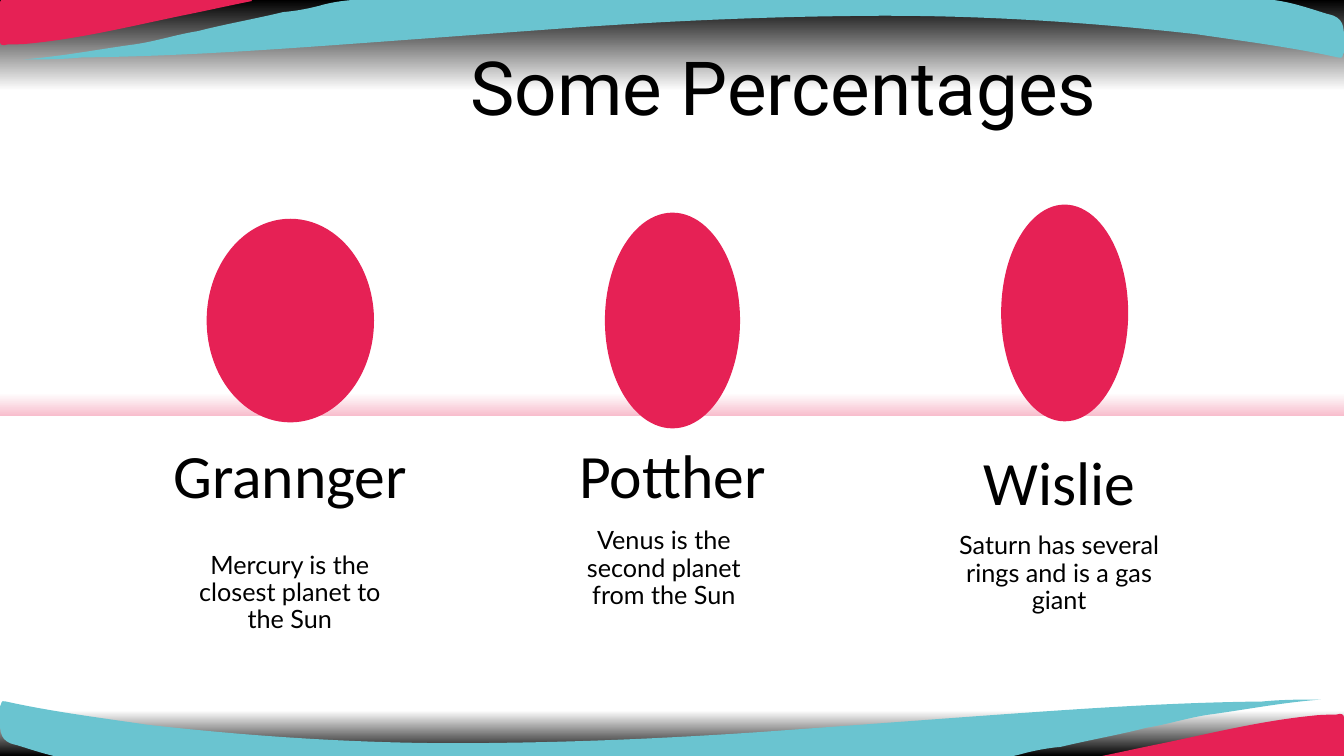
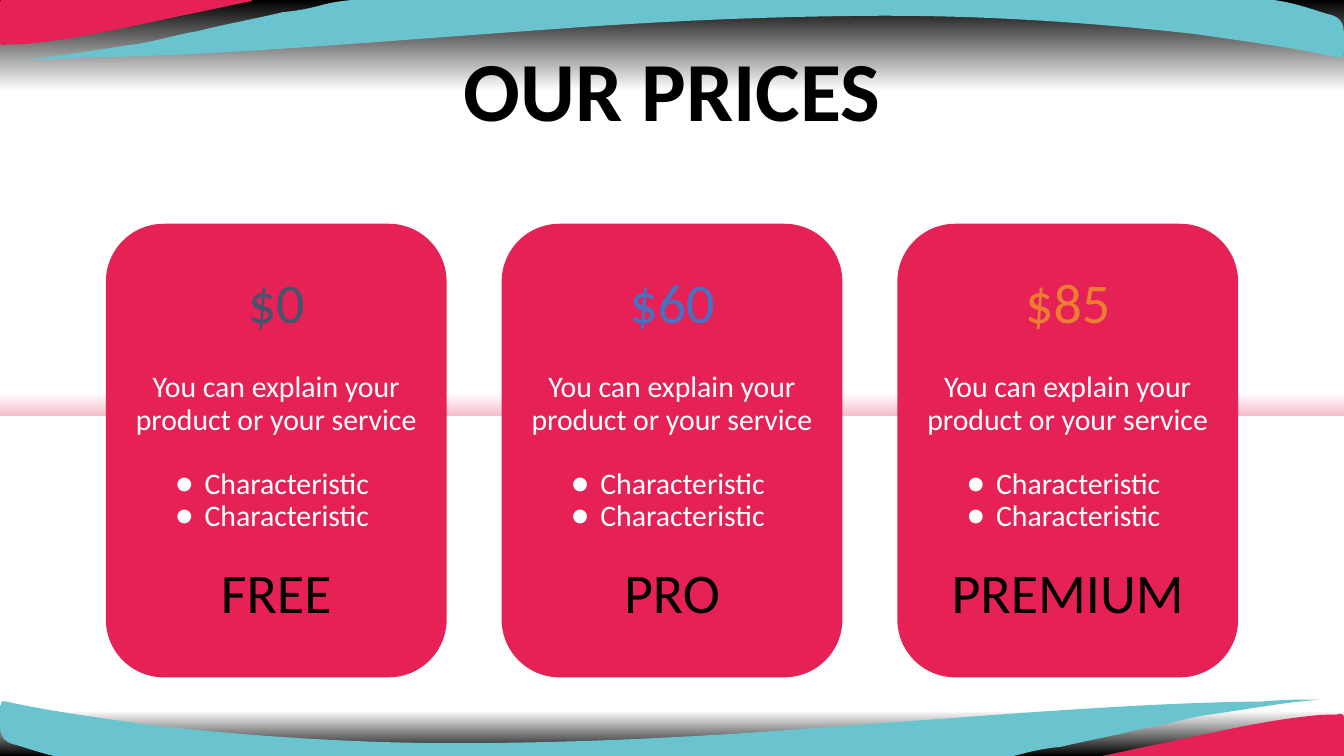
from dataclasses import dataclass
from typing import NamedTuple

from lxml import etree
from pptx import Presentation
from pptx import util as u
from pptx.dml.color import RGBColor
from pptx.enum import shapes, text
from pptx.oxml import ns

COLORS = {
    "pink": "E62155", "teal": "6AC4D0", "blush": "F8BECD", "black": "000000",
    "white": "FFFFFF", "slate": "44546A", "blue": "4472C4", "orange": "ED7D31",
}
WIDTH, HEIGHT = 13.33, 7.5
BACKDROP = [(0, "black"), (12, "white"), (52, "white"), (55, "blush"),
            (55, "white"), (94, "white"), (100, "black")]

# Outlines: a start point, then three points (two controls, one end) per curve
TEAL_WAVE = [
    (13.27, 0.57),
    (12.82, 0.47), (12.34, 0.41), (11.87, 0.34), (10.71, 0.21), (9.55, 0.14), (8.39, 0.16),
    (7.5, 0.17), (6.64, 0.21), (5.75, 0.27), (5.06, 0.32), (4.38, 0.37), (3.7, 0.42),
    (2.73, 0.49), (1.78, 0.56), (0.81, 0.57), (0.62, 0.59), (0.41, 0.59), (0.23, 0.59),
    (0.62, 0.56), (0.97, 0.49), (1.34, 0.44), (1.55, 0.41), (1.76, 0.34), (1.96, 0.31),
    (2.23, 0.24), (2.52, 0.19), (2.81, 0.12), (2.93, 0.11), (3.04, 0.09), (3.16, 0.06),
    (3.39, -0.01), (3.64, -0.01), (3.86, -0.01), (6.74, -0.01), (9.61, -0.01), (12.47, -0.01),
    (12.73, -0.01), (12.94, 0.07), (13.17, 0.14), (13.33, 0.17), (13.33, 0.27), (13.33, 0.39),
    (13.33, 0.42), (13.33, 0.47), (13.33, 0.52), (13.31, 0.54), (13.33, 0.59), (13.27, 0.57),
]
PINK_CORNER = [
    (2.5, 0.01),
    (2.25, 0.06), (2.03, 0.11), (1.78, 0.16), (1.3, 0.26), (0.81, 0.38), (0.31, 0.43),
    (0.23, 0.44), (0.14, 0.44), (0.08, 0.44), (0.02, 0.46), (0, 0.44), (0, 0.41),
    (0, 0.27), (0, 0.16), (0, 0.04), (0, -0.03), (0.06, -0.01), (0.1, -0.01),
    (0.74, -0.01), (1.38, -0.01), (2.03, -0.01), (2.19, -0.01), (2.34, -0.01), (2.48, -0.01),
    (2.48, -0.01), (2.5, -0.01), (2.5, 0.01),
]
WAVES = [(TEAL_WAVE, "teal"), (PINK_CORNER, "pink")]
TURN_X, TURN_Y = 13.33, 7.53  # sums of coordinates under the half turn


class Box(NamedTuple):
    left: float
    top: float
    width: float
    height: float

    def lengths(self) -> list:
        return [u.Inches(value) for value in self]


@dataclass
class Person:
    name: str
    description: str
    portrait: Box
    name_box: Box
    description_box: Box


@dataclass
class Plan:
    price: str
    price_color: str
    name: str


PEOPLE = [
    Person("Grannger", "Mercury is the closest planet to the Sun",
           Box(2.05, 2.17, 1.66, 2.02), Box(0.96, 4.44, 3.84, 0.77),
           Box(1.69, 5.35, 2.37, 1.1)),
    Person("Potther", "Venus is the second planet from the Sun",
           Box(6, 2.11, 1.34, 2.14), Box(4.75, 4.44, 3.84, 0.77),
           Box(5.4, 5.11, 2.37, 1.1)),
    Person("Wislie", "Saturn has several rings and is a gas giant",
           Box(9.93, 2.03, 1.26, 2.15), Box(8.59, 4.5, 3.84, 0.78),
           Box(9.32, 5.16, 2.37, 1.1)),
]
PLANS = [Plan("$0", "slate", "FREE"), Plan("$60", "blue", "PRO"),
         Plan("$85", "orange", "PREMIUM")]
PITCH = ["You can explain your", "product or your service"]
FEATURES = ["Characteristic", "Characteristic"]

ROW = Box(1.05, 2.22, 11.23, 4.5)
CARD_WIDTH = 3.38
CARD_STEP = (ROW.width - CARD_WIDTH) / (len(PLANS) - 1)
CARD_INSET = 0.26


def paint(shape, color: str) -> None:
    shape.shadow.inherit = False
    shape.fill.solid()
    shape.fill.fore_color.rgb = RGBColor.from_string(COLORS[color])
    shape.line.fill.background()


def add_solid(slide, kind, box: Box, color: str):
    shape = slide.shapes.add_shape(kind, *box.lengths())
    paint(shape, color)
    return shape


def add_bullet(paragraph, color: str, font: str) -> None:
    properties = paragraph._p.get_or_add_pPr()
    properties.set("marL", str(u.Inches(0.21)))
    properties.set("indent", str(u.Inches(-0.29)))
    bullet_color = etree.SubElement(properties, ns.qn("a:buClr"))
    etree.SubElement(bullet_color, ns.qn("a:srgbClr"), val=COLORS[color])
    etree.SubElement(properties, ns.qn("a:buFont"), typeface=font)
    etree.SubElement(properties, ns.qn("a:buChar"), char="●")


def add_text(slide, box: Box, lines: list[str], *, size: float, font: str = "Calibri",
             color: str = "black", bold: bool = False, spacing: float = 0.9,
             inset: float = 0, anchor=text.MSO_ANCHOR.MIDDLE,
             bullets: tuple[str, ...] | list[str] = (), bullet_gap: float = 0) -> None:
    frame = slide.shapes.add_textbox(*box.lengths()).text_frame
    frame.word_wrap = True
    frame.vertical_anchor = anchor
    frame.margin_left = frame.margin_right = u.Inches(inset)
    frame.margin_top = frame.margin_bottom = u.Inches(inset)
    for index, line in enumerate([*lines, *bullets]):
        paragraph = frame.add_paragraph() if index else frame.paragraphs[0]
        paragraph.alignment = text.PP_ALIGN.CENTER
        paragraph.line_spacing = spacing
        run = paragraph.add_run()
        run.text = line
        run.font.size = u.Pt(size)
        run.font.name = font
        run.font.bold = bold
        run.font.color.rgb = RGBColor.from_string(COLORS[color])
        if index >= len(lines):
            if index == len(lines):
                paragraph.space_before = u.Pt(bullet_gap)
            add_bullet(paragraph, color, font)


def add_outline(slide, points: list[tuple[float, float]], color: str) -> None:
    start, *rest = [(u.Inches(x), u.Inches(y)) for x, y in points]
    builder = slide.shapes.build_freeform(*start)
    builder.add_line_segments(rest, close=True)
    shape = builder.convert_to_shape()
    paint(shape, color)
    # Join every three straight segments into one cubic curve
    segments = shape._element.spPr.findall(".//" + ns.qn("a:lnTo"))
    for first in range(0, len(segments), 3):
        curve = etree.Element(ns.qn("a:cubicBezTo"))
        segments[first].addprevious(curve)
        for segment in segments[first:first + 3]:
            curve.append(segment[0])
            segment.getparent().remove(segment)


def add_backdrop(slide) -> None:
    shape = add_solid(slide, shapes.MSO_SHAPE.RECTANGLE, Box(0, 0, WIDTH, HEIGHT), "white")
    shape.fill.gradient()
    shape.fill.gradient_angle = 270
    stops = shape._element.spPr.find(".//" + ns.qn("a:gsLst"))
    for stop in list(stops):
        stops.remove(stop)
    for position, color in BACKDROP:
        stop = etree.SubElement(stops, ns.qn("a:gs"), pos=str(position * 1000))
        etree.SubElement(stop, ns.qn("a:srgbClr"), val=COLORS[color])


def add_themed_slide(presentation):
    slide = presentation.slides.add_slide(presentation.slide_layouts[6])
    add_backdrop(slide)
    # Waves at the top, and the same ones turned half round at the bottom
    for points, color in WAVES:
        add_outline(slide, points, color)
    for points, color in WAVES:
        add_outline(slide, [(TURN_X - x, TURN_Y - y) for x, y in points], color)
    return slide


def add_person(slide, person: Person) -> None:
    add_solid(slide, shapes.MSO_SHAPE.OVAL, person.portrait, "pink")
    add_text(slide, person.name_box, [person.name], size=44, inset=0.13,
             anchor=text.MSO_ANCHOR.BOTTOM)
    add_text(slide, person.description_box, [person.description], size=18, font="Lato",
             inset=0.13, anchor=text.MSO_ANCHOR.TOP)


def add_plan(slide, plan: Plan, left: float) -> None:
    card = add_solid(slide, shapes.MSO_SHAPE.ROUNDED_RECTANGLE,
                     Box(left, ROW.top, CARD_WIDTH, ROW.height), "pink")
    card.adjustments[0] = 0.17
    text_left, text_width = left + CARD_INSET, CARD_WIDTH - 2 * CARD_INSET
    add_text(slide, Box(text_left, 2.7, text_width, 0.7), [plan.price], size=40,
             color=plan.price_color, spacing=0.8)
    add_text(slide, Box(text_left, 3.4, text_width, 2.18), PITCH, size=21.3,
             color="white", bullets=FEATURES, bullet_gap=23)
    add_text(slide, Box(text_left, 5.58, text_width, 0.7), [plan.name], size=40,
             spacing=0.8)


def main() -> None:
    presentation = Presentation()
    presentation.slide_width = u.Inches(WIDTH)
    presentation.slide_height = u.Inches(HEIGHT)

    # People
    slide = add_themed_slide(presentation)
    add_text(slide, Box(2.21, 0.49, 11.12, 0.84), ["Some Percentages"], size=53.3,
             font="Roboto", inset=0.13)
    for person in PEOPLE:
        add_person(slide, person)

    # Prices
    slide = add_themed_slide(presentation)
    add_text(slide, Box(ROW.left, 0.52, ROW.width, 0.84), ["OUR PRICES"], size=60, bold=True)
    for index, plan in enumerate(PLANS):
        add_plan(slide, plan, ROW.left + index * CARD_STEP)

    presentation.save("out.pptx")


if __name__ == "__main__":
    main()
